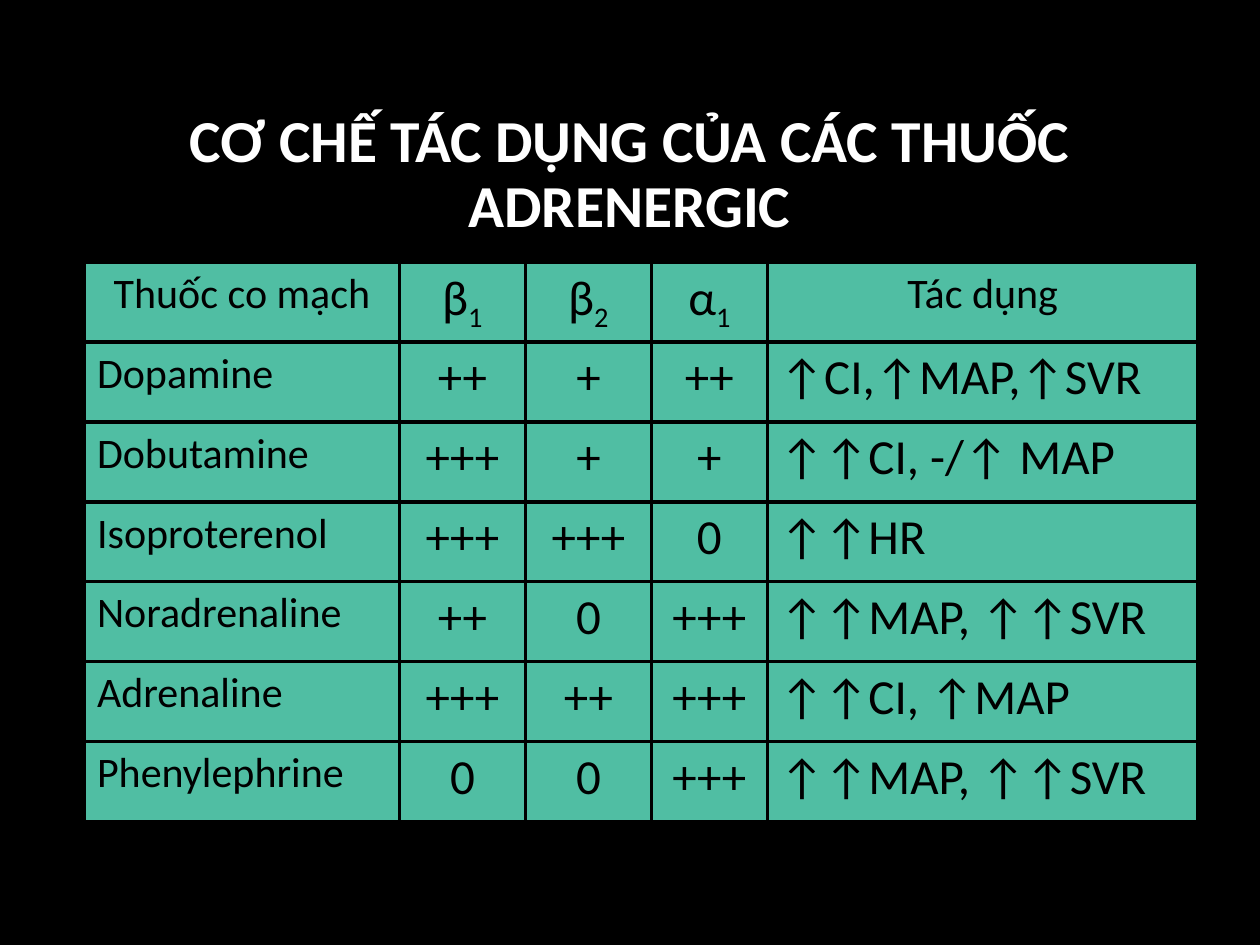
"""Build a slide tabulating how adrenergic drugs act on receptors."""
from dataclasses import dataclass

from pptx import Presentation
from pptx.dml.color import RGBColor as Color
from pptx.enum.text import MSO_ANCHOR as Anchor, PP_ALIGN as Align
from pptx.oxml import parse_xml
from pptx.oxml.ns import nsdecls
from pptx.util import Inches, Pt

TITLE = "CƠ CHẾ TÁC DỤNG CỦA CÁC THUỐC ADRENERGIC"
HEADINGS = [("Thuốc co mạch",), ("β", "1"), ("β", "2"), ("α", "1"), ("Tác dụng",)]
DRUGS = [
    ("Dopamine", "++", "+", "++", "↑CI,↑MAP,↑SVR"),
    ("Dobutamine", "+++", "+", "+", "↑↑CI, -/↑ MAP"),
    ("Isoproterenol", "+++", "+++", "0", "↑↑HR"),
    ("Noradrenaline", "++", "0", "+++", "↑↑MAP, ↑↑SVR"),
    ("Adrenaline", "+++", "++", "+++", "↑↑CI, ↑MAP"),
    ("Phenylephrine", "0", "0", "+++", "↑↑MAP, ↑↑SVR"),
]
COLUMN_WIDTHS = [2.5, 1, 1, 0.92, 3.42]
NAME_COLUMN, EFFECT_COLUMN = 0, len(COLUMN_WIDTHS) - 1
TITLE_BOX = (0.75, 0.67, 8.49, 1.45)
TABLE_LEFT, TABLE_TOP, TABLE_HEIGHT = 0.67, 2.08, 4.44


@dataclass(frozen=True)
class Theme:
    font: str = "Calibri"
    background: str = "000000"
    title: str = "FFFFFF"
    cell: str = "50BEA3"
    ink: str = "000000"
    border: str = "000000"
    border_width: float = 2.25
    title_size: int = 34
    label_size: int = 24
    value_size: int = 28


THEME = Theme()


def style_run(run, size, color, bold=False):
    run.font.name = THEME.font
    run.font.size = Pt(size)
    run.font.bold = bold
    run.font.color.rgb = Color.from_string(color)


def add_borders(cell):
    properties = cell._tc.get_or_add_tcPr()
    for position, side in enumerate(("lnL", "lnR", "lnT", "lnB")):
        properties.insert(position, parse_xml(
            f'<a:{side} {nsdecls("a")} w="{Pt(THEME.border_width)}"><a:solidFill>'
            f'<a:srgbClr val="{THEME.border}"/></a:solidFill></a:{side}>'))


def fill_cell(cell, parts, size, align):
    cell.fill.solid()
    cell.fill.fore_color.rgb = Color.from_string(THEME.cell)
    add_borders(cell)
    paragraph = cell.text_frame.paragraphs[0]
    paragraph.alignment = align
    for level, part in enumerate(parts):
        run = paragraph.add_run()
        run.text = part
        style_run(run, size, THEME.ink)
        if level:
            run._r.get_or_add_rPr().set("baseline", "-25000")


def add_title(slide):
    heading = slide.shapes.add_textbox(*map(Inches, TITLE_BOX)).text_frame
    heading.word_wrap = True
    heading.vertical_anchor = Anchor.MIDDLE
    heading.text = TITLE
    paragraph = heading.paragraphs[0]
    paragraph.alignment = Align.CENTER
    paragraph.line_spacing = 0.9
    style_run(paragraph.runs[0], THEME.title_size, THEME.title, bold=True)


def add_drug_table(slide):
    rows = [HEADINGS] + [[(entry,) for entry in drug] for drug in DRUGS]
    table = slide.shapes.add_table(
        len(rows), len(COLUMN_WIDTHS), Inches(TABLE_LEFT), Inches(TABLE_TOP),
        Inches(sum(COLUMN_WIDTHS)), Inches(TABLE_HEIGHT)).table
    table.first_row = table.horz_banding = False
    for column, width in zip(table.columns, COLUMN_WIDTHS):
        column.width = Inches(width)
    for r, row in enumerate(rows):
        for c, parts in enumerate(row):
            is_heading = r == 0
            is_label = c == NAME_COLUMN or (is_heading and c == EFFECT_COLUMN)
            is_text = c in (NAME_COLUMN, EFFECT_COLUMN) and not is_heading
            fill_cell(table.cell(r, c), parts,
                      THEME.label_size if is_label else THEME.value_size,
                      Align.LEFT if is_text else Align.CENTER)


def main():
    deck = Presentation()
    deck.slide_width, deck.slide_height = Inches(10), Inches(7.5)
    slide = deck.slides.add_slide(deck.slide_layouts[6])
    slide.background.fill.solid()
    slide.background.fill.fore_color.rgb = Color.from_string(THEME.background)
    add_title(slide)
    add_drug_table(slide)
    deck.save("out.pptx")


if __name__ == "__main__":
    main()
